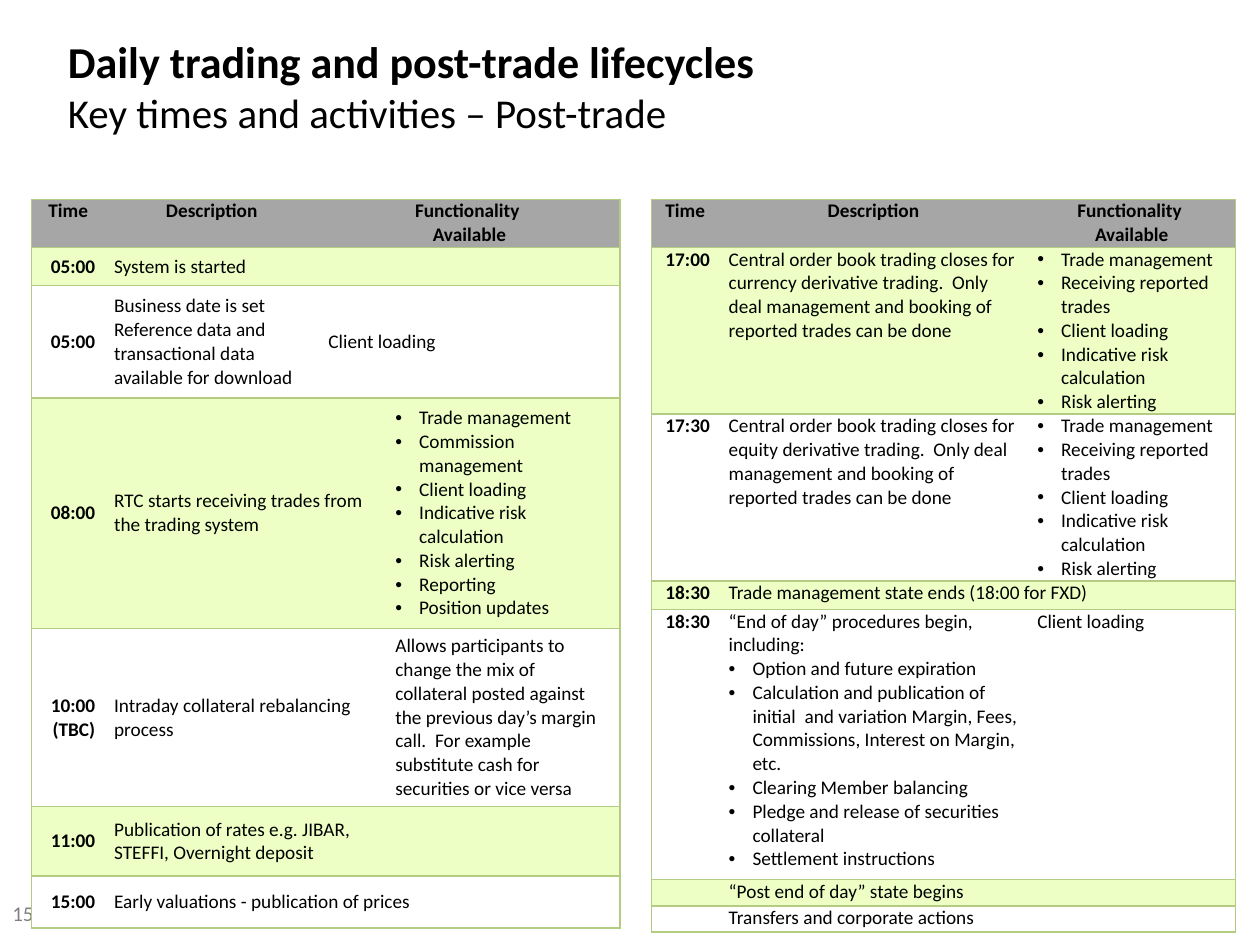
from dataclasses import dataclass

from lxml.etree import SubElement
from pptx import Presentation
from pptx.dml.color import RGBColor
from pptx.enum.text import MSO_ANCHOR, PP_ALIGN
from pptx.oxml.ns import qn
from pptx.util import Cm, Pt

BLACK = RGBColor(0x00, 0x00, 0x00)
WHITE = RGBColor(0xFF, 0xFF, 0xFF)
NUMBER_GREY = RGBColor(0x80, 0x80, 0x80)
HEADER_GREY = RGBColor(0xA6, 0xA6, 0xA6)
BAND_GREEN = RGBColor(0xED, 0xFF, 0xC4)
BORDER_GREEN = RGBColor(0xB3, 0xCC, 0x82)
FONT = "Calibri"
CELL_SIZE = 11
BULLET_INDENT = Cm(0.48)


@dataclass(frozen=True)
class Entry:
    lines: tuple[str, ...] = ()
    bullets: tuple[str, ...] = ()
    span: int = 1


@dataclass(frozen=True)
class Schedule:
    left: float
    columns: tuple[float, ...]
    heights: tuple[float, ...]
    body_anchor: MSO_ANCHOR
    rows: tuple[tuple[Entry, ...], ...]


def entry(*lines: str, span: int = 1) -> Entry:
    return Entry(lines, span=span)


def header(last_span: int) -> tuple[Entry, ...]:
    return (entry("Time"), entry("Description"),
            entry("Functionality ", "Available", span=last_span))


def closing_row(time: str, market: str) -> tuple[Entry, ...]:
    return (
        entry(time),
        entry(f"Central order book trading closes for {market} derivative trading.  "
              "Only deal management and booking of reported trades can be done"),
        Entry(bullets=("Trade management", "Receiving reported trades", "Client loading",
                       "Indicative risk calculation", "Risk alerting")),
    )


DAYTIME = Schedule(
    0.64, (1.47, 4.32, 1.35, 4.72), (0.97, 0.77, 2.26, 4.65, 3.59, 1.4, 1.05),
    MSO_ANCHOR.MIDDLE,
    (
        header(2),
        (entry("05:00"), entry("System is started"), entry(span=2)),
        (entry("05:00"),
         entry("Business date is set",
               "Reference data and transactional data available for download"),
         entry("Client loading", span=2)),
        (entry("08:00"),
         entry("RTC starts receiving trades from the trading system", span=2),
         Entry(bullets=("Trade management", "Commission management", "Client loading",
                        "Indicative risk calculation", "Risk alerting", "Reporting",
                        "Position updates"))),
        (entry("10:00 (TBC)"),
         entry("Intraday collateral rebalancing process", span=2),
         entry("Allows participants to change the mix of collateral posted against the "
               "previous day’s margin call.  For example substitute cash for securities "
               "or vice versa")),
        (entry("11:00"),
         entry("Publication of rates e.g. JIBAR, STEFFI, Overnight deposit", span=2),
         entry()),
        (entry("15:00"), entry("Early valuations - publication of prices", span=3)),
    ),
)

EVENING = Schedule(
    13.13, (1.37, 6.22, 4.19), (0.97, 3.36, 3.36, 0.58, 5.44, 0.53, 0.53),
    MSO_ANCHOR.TOP,
    (
        header(1),
        closing_row("17:00", "currency"),
        closing_row("17:30", "equity"),
        (entry("18:30"), entry("Trade management state ends (18:00 for FXD)", span=2)),
        (entry("18:30"),
         Entry(("“End of day” procedures begin, including:",),
               ("Option and future expiration",
                "Calculation and publication of initial  and variation Margin, Fees, "
                "Commissions, Interest on Margin, etc.",
                "Clearing Member balancing",
                "Pledge and release of securities collateral",
                "Settlement instructions")),
         entry("Client loading")),
        (entry(), entry("“Post end of day” state begins"), entry()),
        (entry(), entry("Transfers and corporate actions"), entry()),
    ),
)


def add_run(para, text: str, size: float, color: RGBColor = BLACK, bold: bool = False) -> None:
    run = para.add_run()
    run.text = text
    run.font.name = FONT
    run.font.size = Pt(size)
    run.font.bold = bold
    run.font.color.rgb = color


def add_bullet(para) -> None:
    properties = para._p.get_or_add_pPr()
    properties.set("marL", str(BULLET_INDENT))
    properties.set("indent", str(-BULLET_INDENT))
    SubElement(properties, qn("a:buFont"), typeface="Arial")
    SubElement(properties, qn("a:buChar"), char="•")


def set_borders(cell, sides: str) -> None:
    """Draw the sides named by letters out of L, R, T and B; clear the rest."""
    properties = cell._tc.get_or_add_tcPr()
    for side in "LRTB":
        line = SubElement(properties, qn(f"a:ln{side}"), w=str(Pt(1)))
        if side in sides:
            fill = SubElement(line, qn("a:solidFill"))
            SubElement(fill, qn("a:srgbClr"), val=str(BORDER_GREEN))
        else:
            SubElement(line, qn("a:noFill"))


def fill_row_cell(cell, row: int, last_row: int) -> None:
    if row == 0 or row % 2 or row == last_row:
        cell.fill.solid()
        cell.fill.fore_color.rgb = (
            HEADER_GREY if row == 0 else BAND_GREEN if row % 2 else WHITE)
    else:
        cell.fill.background()


def write_entry(cell, item: Entry, alignment: PP_ALIGN, bold: bool) -> None:
    frame = cell.text_frame
    texts = item.lines + item.bullets
    if not texts:
        SubElement(frame.paragraphs[0]._p, qn("a:endParaRPr"), sz=str(CELL_SIZE * 100))
    for index, text in enumerate(texts):
        para = frame.add_paragraph() if index else frame.paragraphs[0]
        para.alignment = alignment
        if index >= len(item.lines):
            add_bullet(para)
        add_run(para, text, CELL_SIZE, bold=bold)


def add_schedule(page, schedule: Schedule) -> None:
    row_count, column_count = len(schedule.heights), len(schedule.columns)
    table = page.shapes.add_table(
        row_count, column_count, Cm(schedule.left), Cm(4.02),
        Cm(sum(schedule.columns)), Cm(sum(schedule.heights))).table
    table.first_row = table.horz_banding = False
    for column, width in zip(table.columns, schedule.columns):
        column.width = Cm(width)
    for row, (height, items) in enumerate(zip(schedule.heights, schedule.rows)):
        table.rows[row].height = Cm(height)
        start = 0
        for item in items:
            end = start + item.span
            cell = table.cell(row, start)
            if item.span > 1:
                cell.merge(table.cell(row, end - 1))
            sides = "TB" + "L" * (start == 0) + "R" * (end == column_count)
            for position in range(start, end):
                part = table.cell(row, position)
                set_borders(part, sides)
                fill_row_cell(part, row, row_count - 1)
            cell.margin_left = cell.margin_right = Cm(0.19)
            cell.margin_top = cell.margin_bottom = 0
            cell.vertical_anchor = schedule.body_anchor if row else MSO_ANCHOR.TOP
            alignment = (PP_ALIGN.CENTER if row == 0
                         else PP_ALIGN.RIGHT if start == 0 else PP_ALIGN.LEFT)
            write_entry(cell, item, alignment, bold=row == 0 or start == 0)
            start = end


def add_text_frame(page, left: float, top: float, width: float, height: float):
    frame = page.shapes.add_textbox(Cm(left), Cm(top), Cm(width), Cm(height)).text_frame
    frame.word_wrap = True
    return frame


def main() -> None:
    deck = Presentation()
    deck.slide_width, deck.slide_height = Cm(25.4), Cm(19.05)
    page = deck.slides.add_slide(deck.slide_layouts[6])

    number = add_text_frame(page, 0, 18.03, 1.5, 1.02)
    add_run(number.paragraphs[0], "15", 12, NUMBER_GREY)

    for schedule in (DAYTIME, EVENING):
        add_schedule(page, schedule)

    title = add_text_frame(page, 1.12, 0.76, 16, 1.93)
    title.vertical_anchor = MSO_ANCHOR.MIDDLE
    para = title.paragraphs[0]
    add_run(para, "Daily trading and post-trade lifecycles", 25.2, bold=True)
    para.add_line_break()
    add_run(para, "Key times and activities – Post-trade", 23.4)

    deck.save("out.pptx")


if __name__ == "__main__":
    main()
